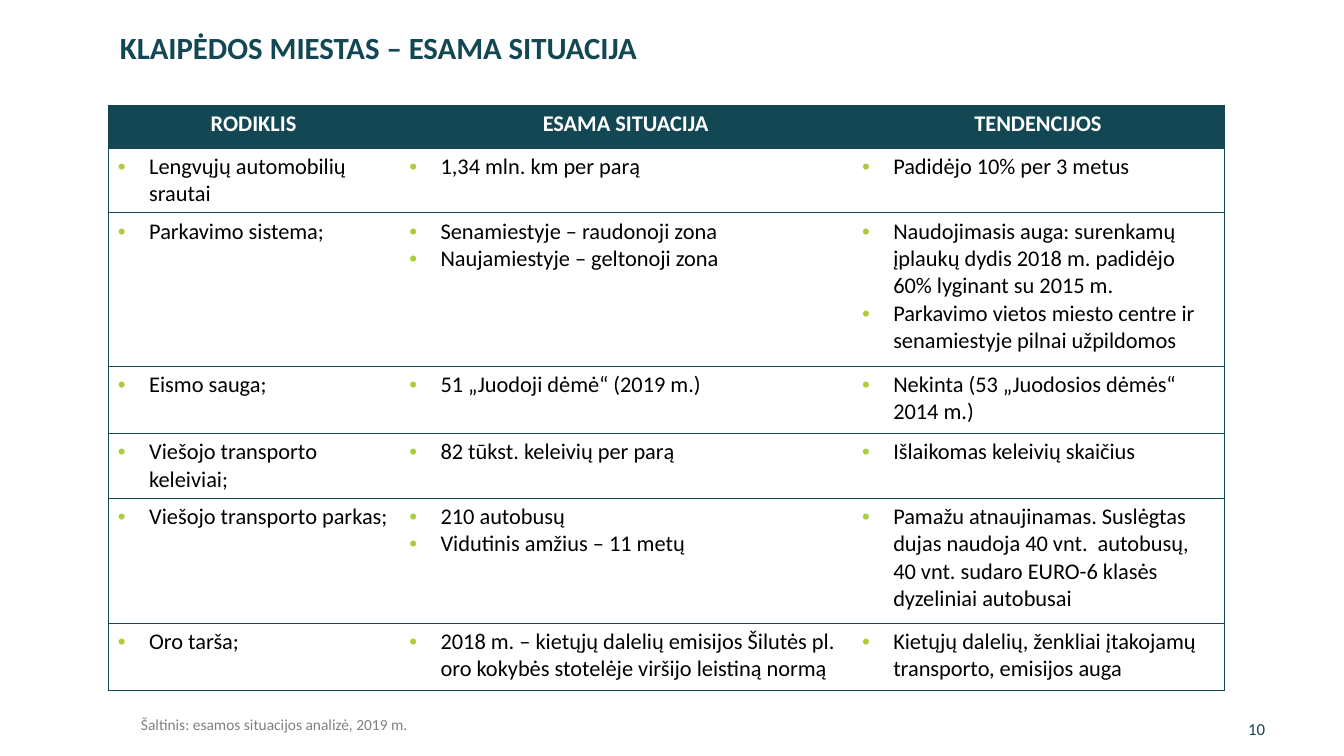
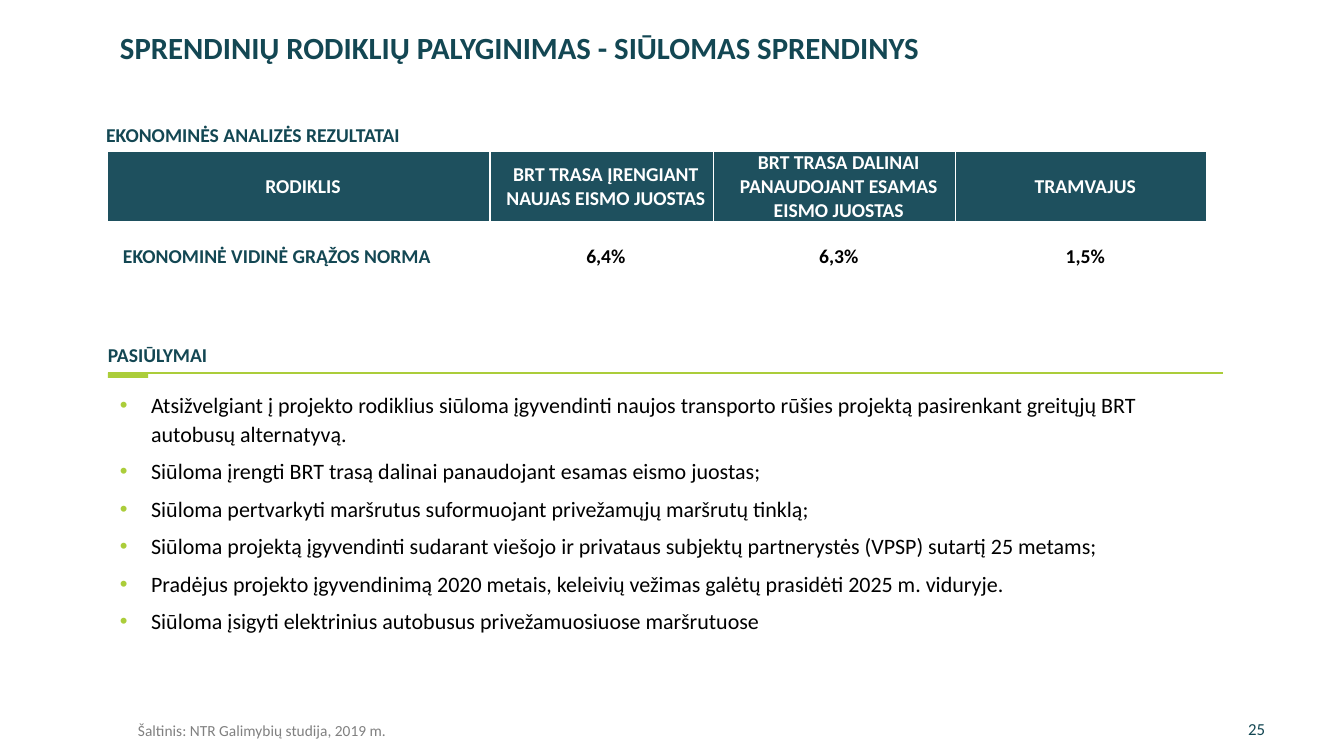
from dataclasses import dataclass

from lxml.etree import SubElement
from pptx import Presentation
from pptx.dml.color import RGBColor
from pptx.enum.shapes import MSO_CONNECTOR, MSO_SHAPE
from pptx.enum.text import MSO_ANCHOR, MSO_AUTO_SIZE, PP_ALIGN
from pptx.oxml.ns import qn
from pptx.util import Pt

EMU_PER_PX = 9144


@dataclass(frozen=True)
class Theme:
    font: str = "Calibri"
    teal: str = "134753"
    band: str = "1E505E"
    lime: str = "ABCD3A"
    grey: str = "808080"
    black: str = "000000"
    white: str = "FFFFFF"
    title_size: float = 22
    table_size: float = 16
    list_size: float = 15.7
    label_size: float = 14
    number_size: float = 12
    source_size: float = 11
    thin: float = 0.5
    line: float = 1
    no_table_style: str = "{2D5ABB26-0587-4C30-8999-92F81FD0307C}"


THEME = Theme()
TITLE_BOX = (109, 28, 1133, 56)
NUMBER_BOX = (1228, 703, 63, 40)
CELL_MARGINS = (7, 0, 7, 0)

SITUATION_HEADER = ["RODIKLIS", "ESAMA SITUACIJA", "TENDENCIJOS"]
SITUATION_ROWS = [
    (["Lengvųjų automobilių srautai"],
     ["1,34 mln. km per parą"],
     ["Padidėjo 10% per 3 metus"]),
    (["Parkavimo sistema;"],
     ["Senamiestyje – raudonoji zona", "Naujamiestyje – geltonoji zona"],
     ["Naudojimasis auga: surenkamų įplaukų dydis 2018 m. padidėjo 60% lyginant su 2015 m.",
      "Parkavimo vietos miesto centre ir senamiestyje pilnai užpildomos"]),
    (["Eismo sauga;"],
     ["51 „Juodoji dėmė“ (2019 m.)"],
     ["Nekinta (53 „Juodosios dėmės“ 2014 m.)"]),
    (["Viešojo transporto keleiviai;"],
     ["82 tūkst. keleivių per parą"],
     ["Išlaikomas keleivių skaičius"]),
    (["Viešojo transporto parkas;"],
     ["210 autobusų", "Vidutinis amžius – 11 metų"],
     ["Pamažu atnaujinamas. Suslėgtas dujas naudoja 40 vnt.  autobusų, "
      "40 vnt. sudaro EURO-6 klasės dyzeliniai autobusai"]),
    (["Oro tarša;"],
     ["2018 m. – kietųjų dalelių emisijos Šilutės pl. oro kokybės stotelėje viršijo leistiną normą"],
     ["Kietųjų dalelių, ženkliai įtakojamų transporto, emisijos auga"]),
]
ECONOMIC_HEADER = [
    "RODIKLIS",
    "BRT TRASA ĮRENGIANT NAUJAS EISMO JUOSTAS",
    "BRT TRASA DALINAI PANAUDOJANT ESAMAS EISMO JUOSTAS",
    "TRAMVAJUS",
]
ECONOMIC_VALUES = ["EKONOMINĖ VIDINĖ GRĄŽOS NORMA", "6,4%", "6,3%", "1,5%"]
PROPOSALS = [
    "Atsižvelgiant į projekto rodiklius siūloma įgyvendinti naujos transporto rūšies "
    "projektą pasirenkant greitųjų BRT autobusų alternatyvą.",
    "Siūloma įrengti BRT trasą dalinai panaudojant esamas eismo juostas;",
    "Siūloma pertvarkyti maršrutus suformuojant privežamųjų maršrutų tinklą;",
    "Siūloma projektą įgyvendinti sudarant viešojo ir privataus subjektų partnerystės "
    "(VPSP) sutartį 25 metams;",
    "Pradėjus projekto įgyvendinimą 2020 metais, keleivių vežimas galėtų prasidėti 2025 m. viduryje.",
    "Siūloma įsigyti elektrinius autobusus privežamuosiuose maršrutuose",
]


def px(length):
    return length * EMU_PER_PX


def px_box(box):
    return [px(length) for length in box]


def rgb(color):
    return RGBColor.from_string(color)


def add_bullet(paragraph):
    properties = paragraph._p.get_or_add_pPr()
    properties.set("marL", str(px(31)))
    properties.set("indent", str(px(-31)))
    bullet_color = SubElement(properties, qn("a:buClr"))
    SubElement(bullet_color, qn("a:srgbClr"), val=THEME.lime)
    SubElement(properties, qn("a:buFont"), typeface="Arial")
    SubElement(properties, qn("a:buChar"), char="•")


def write(text_frame, lines, size, color, bold=False, align=PP_ALIGN.LEFT,
          bullet=False, indent=0, line_spacing=None, gap=0):
    for index, line in enumerate(lines):
        paragraph = text_frame.add_paragraph() if index else text_frame.paragraphs[0]
        paragraph.text = line
        paragraph.alignment = align
        if bullet:
            add_bullet(paragraph)
        elif indent:
            paragraph._p.get_or_add_pPr().set("marL", str(px(indent)))
        if line_spacing:
            paragraph.line_spacing = line_spacing
        paragraph.space_before = Pt(gap if index else 0)
        paragraph.space_after = Pt(gap)
        for run in paragraph.runs:
            run.font.name = THEME.font
            run.font.size = Pt(size)
            run.font.bold = bold
            run.font.color.rgb = rgb(color)


def set_margins(target, margins):
    (target.margin_left, target.margin_top,
     target.margin_right, target.margin_bottom) = px_box(margins)


def add_text(slide, box, lines, size, color, anchor=MSO_ANCHOR.TOP,
             margins=(10, 5, 10, 5), wrap=True, **style):
    text_frame = slide.shapes.add_textbox(*px_box(box)).text_frame
    text_frame.word_wrap = wrap
    text_frame.vertical_anchor = anchor
    set_margins(text_frame, margins)
    write(text_frame, lines, size, color, **style)


def add_plain_table(slide, left, top, widths, heights):
    frame = slide.shapes.add_table(len(heights), len(widths), px(left), px(top),
                                   px(sum(widths)), px(sum(heights)))
    table = frame.table
    table.first_row = False
    table.horz_banding = False
    table._tbl.tblPr.find(qn("a:tableStyleId")).text = THEME.no_table_style
    for column, width in zip(table.columns, widths):
        column.width = px(width)
    for row, height in zip(table.rows, heights):
        row.height = px(height)
    return table


def format_cell(cell, sides, border_color, border_width, fill=None):
    properties = cell._tc.get_or_add_tcPr()
    for side in "LRTB":
        if side in sides:
            line = SubElement(properties, qn(f"a:ln{side}"), w=str(Pt(border_width)))
            solid = SubElement(line, qn("a:solidFill"))
            SubElement(solid, qn("a:srgbClr"), val=border_color)
    if fill:
        cell.fill.solid()
        cell.fill.fore_color.rgb = rgb(fill)
    else:
        cell.fill.background()


def add_situation_table(slide, left, top):
    widths = [289, 449, 369]
    table = add_plain_table(slide, left, top, widths, [43, 64, 152, 67, 64, 124, 67])
    rows = [[[heading] for heading in SITUATION_HEADER], *SITUATION_ROWS]
    for row_index, row in enumerate(rows):
        header = row_index == 0
        for column_index, lines in enumerate(row):
            cell = table.cell(row_index, column_index)
            sides = "TB" + {0: "L", len(widths) - 1: "R"}.get(column_index, "")
            format_cell(cell, sides, THEME.teal, THEME.thin, THEME.teal if header else None)
            write(cell.text_frame, lines, THEME.table_size,
                  THEME.white if header else THEME.black, bold=header,
                  align=PP_ALIGN.CENTER if header else PP_ALIGN.LEFT, bullet=not header)


def add_economic_table(slide, left, top):
    table = add_plain_table(slide, left, top, [379, 222, 240, 249], [70, 70])
    for row_index, row in enumerate([ECONOMIC_HEADER, ECONOMIC_VALUES]):
        header = row_index == 0
        for column_index, line in enumerate(row):
            cell = table.cell(row_index, column_index)
            row_label = not header and column_index == 0
            color = THEME.white if header else THEME.teal if row_label else THEME.black
            format_cell(cell, "LRTB", THEME.white, THEME.line,
                        THEME.band if header else THEME.white)
            cell.vertical_anchor = MSO_ANCHOR.MIDDLE
            set_margins(cell, CELL_MARGINS)
            write(cell.text_frame, [line], THEME.label_size, color, bold=True, indent=8,
                  align=PP_ALIGN.LEFT if row_label else PP_ALIGN.CENTER)


def add_section_rule(slide, left, top, width):
    shapes = slide.shapes.add_group_shape().shapes
    rule = shapes.add_connector(MSO_CONNECTOR.STRAIGHT, px(left), px(top),
                                px(left + width), px(top))
    rule.line.color.rgb = rgb(THEME.lime)
    rule.line.width = Pt(THEME.line)
    SubElement(rule._element.spPr, qn("a:effectLst"))
    tab = shapes.add_shape(MSO_SHAPE.RECTANGLE, *px_box((left, top, 40, 5)))
    tab.shadow.inherit = False
    tab.fill.solid()
    tab.fill.fore_color.rgb = rgb(THEME.lime)
    tab.line.fill.background()


def add_proposals(slide, left, top, width):
    add_text(slide, (left, top, 350, 30), ["PASIŪLYMAI"], THEME.label_size, THEME.teal,
             anchor=MSO_ANCHOR.MIDDLE, margins=(0, 5, 10, 5), wrap=False, bold=True)
    add_section_rule(slide, left, top + 33, width)
    add_text(slide, (left + 2, top + 44, width - 1, 277), PROPOSALS, THEME.list_size,
             THEME.black, bullet=True, line_spacing=1.1, gap=3)


def add_base_slide(presentation, title, number, source, source_box):
    slide = presentation.slides.add_slide(presentation.slide_layouts[5])
    shape = slide.shapes.title
    shape.left, shape.top, shape.width, shape.height = px_box(TITLE_BOX)
    text_frame = shape.text_frame
    text_frame.auto_size = MSO_AUTO_SIZE.NONE
    text_frame.word_wrap = True
    text_frame.vertical_anchor = MSO_ANCHOR.TOP
    write(text_frame, [title], THEME.title_size, THEME.teal, bold=True, line_spacing=0.9)
    add_text(slide, NUMBER_BOX, [str(number)], THEME.number_size, THEME.teal,
             anchor=MSO_ANCHOR.MIDDLE)
    add_text(slide, source_box, [source], THEME.source_size, THEME.grey, line_spacing=0.9)
    return slide


def add_situation_slide(presentation):
    slide = add_base_slide(presentation, "KLAIPĖDOS MIESTAS – ESAMA SITUACIJA", 10,
                           "Šaltinis: esamos situacijos analizė, 2019 m.",
                           (130, 707, 1079, 30))
    add_situation_table(slide, 107, 104)


def add_comparison_slide(presentation):
    slide = add_base_slide(presentation,
                           "SPRENDINIŲ RODIKLIŲ PALYGINIMAS - SIŪLOMAS SPRENDINYS", 25,
                           "Šaltinis: NTR Galimybių studija, 2019 m.",
                           (127, 713, 1079, 30))
    add_text(slide, (64, 122, 349, 38), ["EKONOMINĖS ANALIZĖS REZULTATAI"],
             THEME.label_size, THEME.teal, margins=(0, 0, 0, 0), bold=True,
             align=PP_ALIGN.CENTER, indent=25)
    add_economic_table(slide, 107, 150)
    add_proposals(slide, 107, 337, 1106)


def main():
    presentation = Presentation()
    presentation.slide_width = px(1333)
    presentation.slide_height = px(750)
    add_situation_slide(presentation)
    add_comparison_slide(presentation)
    presentation.save("out.pptx")


if __name__ == "__main__":
    main()
